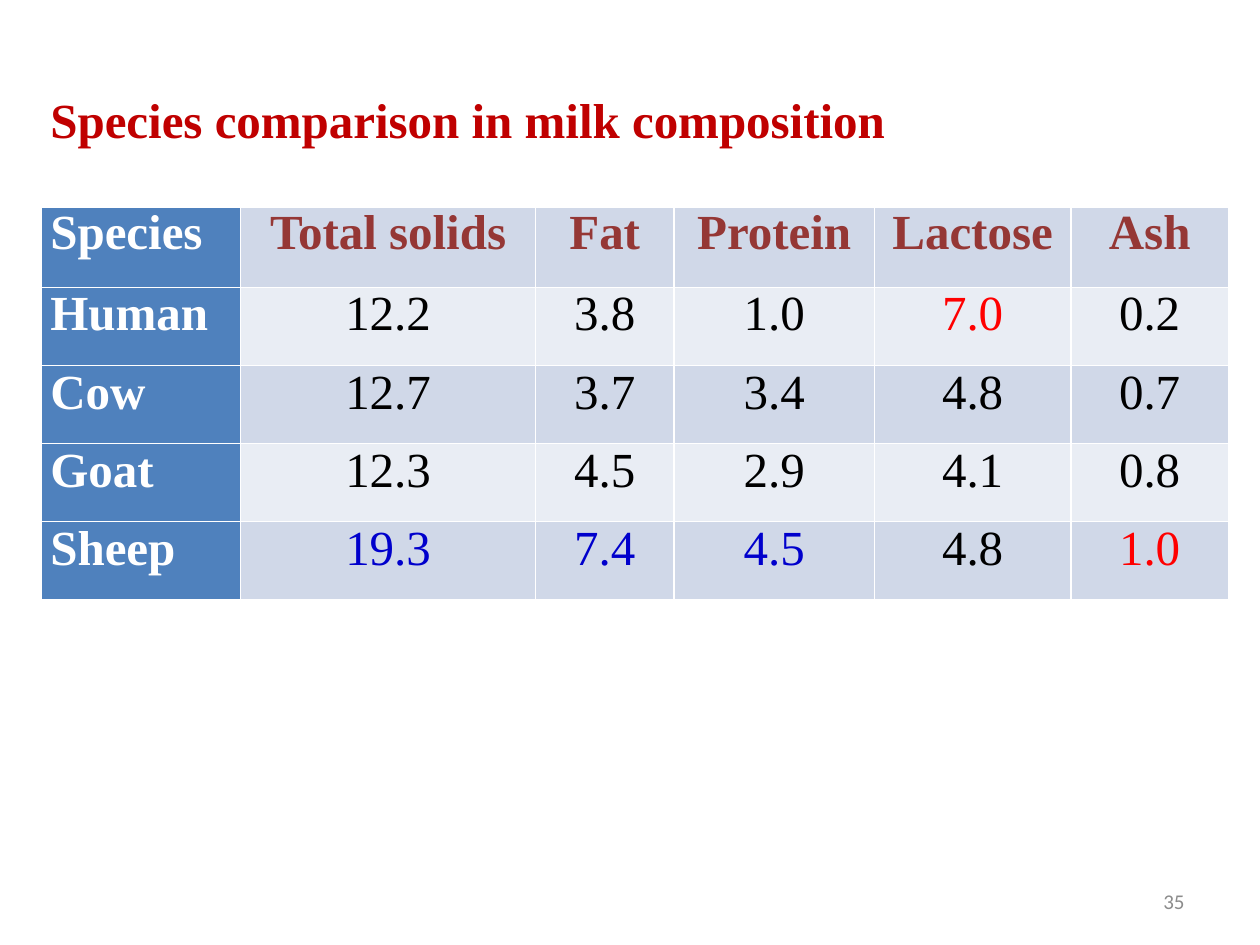
import dataclasses

import lxml.etree
import pptx
import pptx.dml.color
import pptx.enum.text
import pptx.oxml.ns
import pptx.table
import pptx.util

RGBColor = pptx.dml.color.RGBColor
Align = pptx.enum.text.PP_ALIGN
Anchor = pptx.enum.text.MSO_ANCHOR
Inches = pptx.util.Inches
Pt = pptx.util.Pt
qn = pptx.oxml.ns.qn

WHITE = RGBColor(0xFF, 0xFF, 0xFF)
BLACK = RGBColor(0x00, 0x00, 0x00)
TITLE_RED = RGBColor(0xC0, 0x00, 0x00)
HEADER_BROWN = RGBColor(0x95, 0x37, 0x35)
HIGH_RED = RGBColor(0xFF, 0x00, 0x00)
HIGH_BLUE = RGBColor(0x00, 0x00, 0xCC)
SPECIES_BLUE = RGBColor(0x4F, 0x81, 0xBD)
BANDS = (RGBColor(0xD0, 0xD8, 0xE8), RGBColor(0xE9, 0xED, 0xF4))
GREY = RGBColor(0x8C, 0x8C, 0x8C)

COLUMN_WIDTHS = (1.58, 2.34, 1.1, 1.59, 1.56, 1.25)
ROW_HEIGHTS = (0.88, 0.65, 0.62, 0.62, 0.62, 0.62)
TITLE = "Species comparison in milk composition"
ROWS = (
    ("Species", "Total solids", "Fat", "Protein", "Lactose", "Ash"),
    ("Human", "12.2", "3.8", "1.0", "7.0", "0.2"),
    ("Cow", "12.7", "3.7", "3.4", "4.8", "0.7"),
    ("Goat", "12.3", "4.5", "2.9", "4.1", "0.8"),
    ("Sheep", "19.3", "7.4", "4.5", "4.8", "1.0"),
)
HIGHLIGHTS = {
    ("Human", "Lactose"): HIGH_RED,
    ("Sheep", "Total solids"): HIGH_BLUE,
    ("Sheep", "Fat"): HIGH_BLUE,
    ("Sheep", "Protein"): HIGH_BLUE,
    ("Sheep", "Ash"): HIGH_RED,
}


@dataclasses.dataclass(frozen=True)
class CellStyle:
    fill: RGBColor
    color: RGBColor
    bold: bool = True
    align: Align = Align.LEFT
    bottom_border: float = 1


def style_for(row: int, column: int) -> CellStyle:
    if column == 0:
        return CellStyle(SPECIES_BLUE, WHITE)
    band = BANDS[row % 2]
    if row == 0:
        return CellStyle(band, HEADER_BROWN, align=Align.CENTER)
    color = HIGHLIGHTS.get((ROWS[row][0], ROWS[0][column]), BLACK)
    return CellStyle(band, color, bold=False, align=Align.CENTER)


def set_borders(cell: pptx.table._Cell, bottom: float) -> None:
    """Put white lines ahead of the fill, as the schema requires."""
    tc_pr = cell._tc.get_or_add_tcPr()
    widths = {"a:lnL": 1, "a:lnR": 1, "a:lnT": 1, "a:lnB": bottom}
    for i, (tag, width) in enumerate(widths.items()):
        line = lxml.etree.Element(qn(tag), w=str(Pt(width)))
        fill = lxml.etree.SubElement(line, qn("a:solidFill"))
        lxml.etree.SubElement(fill, qn("a:srgbClr"), val=str(WHITE))
        tc_pr.insert(i, line)


def fill_cell(cell: pptx.table._Cell, text: str, style: CellStyle) -> None:
    cell.fill.solid()
    cell.fill.fore_color.rgb = style.fill
    set_borders(cell, style.bottom_border)
    cell.margin_left = cell.margin_right = Inches(0.07)
    cell.margin_top = cell.margin_bottom = 0
    cell.vertical_anchor = Anchor.TOP
    cell.text = text
    p = cell.text_frame.paragraphs[0]
    p.alignment = style.align
    p.font.name = "Times New Roman"
    p.font.size = Pt(28)
    p.font.bold = style.bold
    p.font.color.rgb = style.color


def add_milk_table(s) -> None:
    table = s.shapes.add_table(
        len(ROW_HEIGHTS), len(COLUMN_WIDTHS), Inches(0.33), Inches(0.75),
        Inches(sum(COLUMN_WIDTHS)), Inches(sum(ROW_HEIGHTS))).table
    table.first_row = table.horz_banding = False
    for column, width in zip(table.columns, COLUMN_WIDTHS):
        column.width = Inches(width)
    for row, height in zip(table.rows, ROW_HEIGHTS):
        row.height = Inches(height)

    title = table.cell(0, 0)
    title.merge(table.cell(0, len(COLUMN_WIDTHS) - 1))
    fill_cell(title, TITLE, CellStyle(WHITE, TITLE_RED, bottom_border=3))
    for r, texts in enumerate(ROWS):
        for c, text in enumerate(texts):
            fill_cell(table.cell(r + 1, c), text, style_for(r, c))


def add_slide_number(s, number: str) -> None:
    sp = s.shapes.add_textbox(Inches(7.17), Inches(6.95), Inches(2.33), Inches(0.4))
    tf = sp.text_frame
    tf.word_wrap = True
    tf.vertical_anchor = Anchor.MIDDLE
    tf.text = number
    p = tf.paragraphs[0]
    p.alignment = Align.RIGHT
    p.font.name = "Calibri"
    p.font.size = Pt(12)
    p.font.color.rgb = GREY


def main() -> None:
    prs = pptx.Presentation()
    prs.slide_width, prs.slide_height = Inches(10), Inches(7.5)
    s = prs.slides.add_slide(prs.slide_layouts[6])
    add_slide_number(s, "35")
    add_milk_table(s)
    prs.save("out.pptx")


if __name__ == "__main__":
    main()
